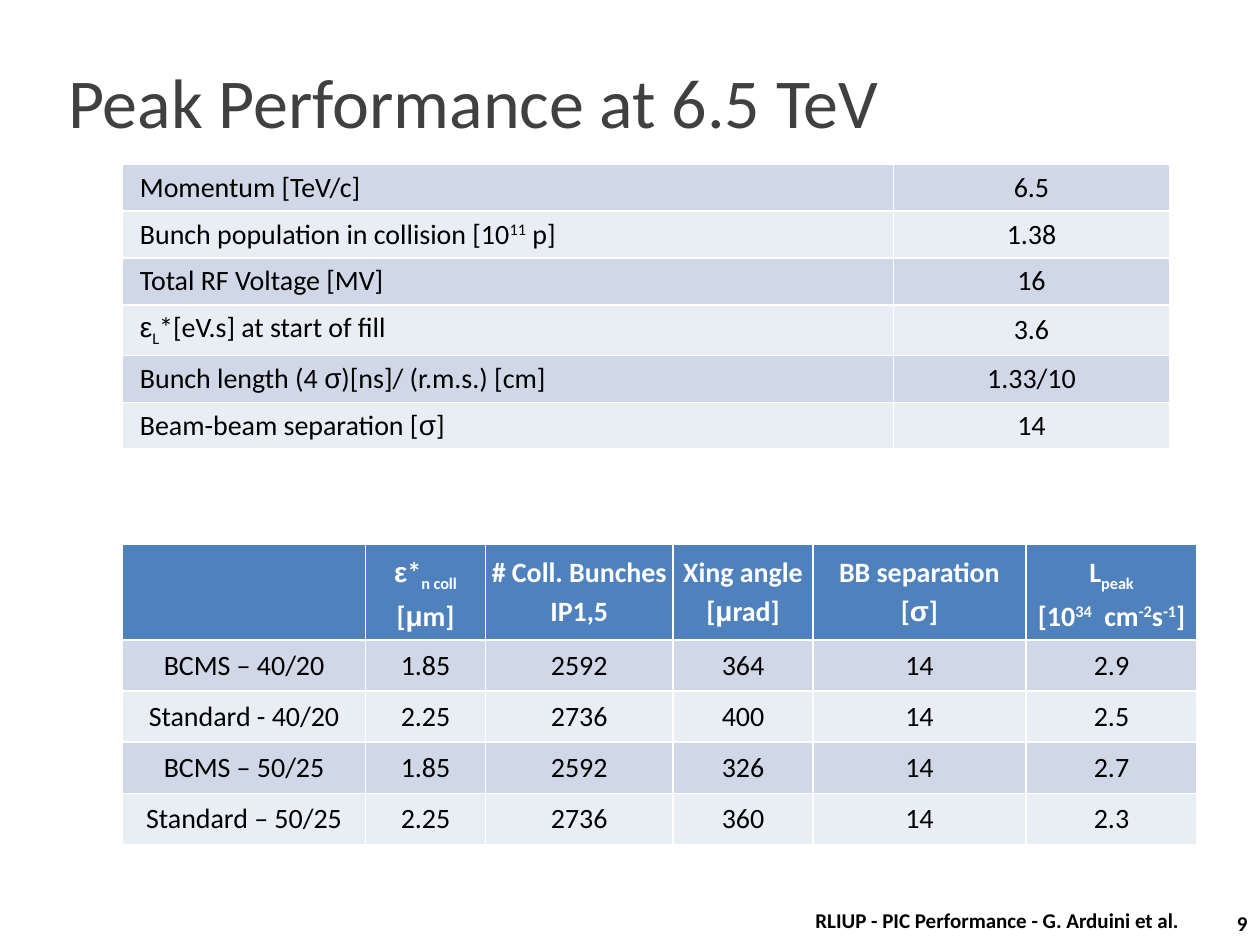
from pptx import Presentation
from pptx.dml.color import RGBColor
from pptx.enum.text import MSO_ANCHOR as Anchor, PP_ALIGN as Align
from pptx.util import Pt

COLORS = {"title": "404040", "text": "000000", "header": "4F81BD",
          "header_text": "FFFFFF", "odd": "D0D8E8", "even": "E9EDF4"}
BASELINES = {"^": "30000", "_": "-25000"}


def write(paragraph, text, size, color, align, bold=False):
    """Runs are split by |; a leading ^ or _ raises or lowers a run."""
    paragraph.alignment = align
    paragraph.font.name = "Calibri"
    paragraph.font.size = Pt(size)
    paragraph.font.bold = bold
    paragraph.font.color.rgb = RGBColor.from_string(COLORS[color])
    for part in text.split("|"):
        run = paragraph.add_run()
        run.text = part.lstrip("^_")
        if part[:1] in BASELINES:
            run._r.get_or_add_rPr().set("baseline", BASELINES[part[0]])
        if part in ("ε", "μ", "σ"):
            run.font.name = "Arial"


def add_grid(left, top, widths, heights, side_margin):
    shape = slide.shapes.add_table(len(heights), len(widths), Pt(left), Pt(top),
                                   Pt(sum(widths)), Pt(sum(heights)))
    table = shape.table
    for column, width in zip(table.columns, widths):
        column.width = Pt(width)
    for row, height in zip(table.rows, heights):
        row.height = Pt(height)
    for cell in table.iter_cells():
        cell.margin_left = cell.margin_right = Pt(side_margin)
        cell.vertical_anchor = Anchor.MIDDLE
        cell.fill.solid()
    return table


presentation = Presentation()
presentation.slide_width, presentation.slide_height = Pt(720), Pt(540)
slide = presentation.slides.add_slide(presentation.slide_layouts[5])

# Title
title = slide.shapes.title
title.left, title.top, title.width, title.height = Pt(36), Pt(21.6), Pt(648), Pt(72)
frame = title.text_frame
frame.margin_left = frame.margin_right = Pt(3)
frame.margin_top = frame.margin_bottom = 0
frame.vertical_anchor = Anchor.MIDDLE
write(frame.paragraphs[0], "Peak Performance at 6.5 TeV", 40, "title", Align.LEFT)

# Performance by filling scheme
headers = ["", "ε|*|_n coll\n[|μ|m]", "# Coll. Bunches IP1,5", "Xing angle\n[|μ|rad]",
           "BB separation [|σ|]", "L|_peak\n[10|^34|  cm|^-2|s|^-1|]"]
schemes = [
    ["BCMS – 40/20", "1.85", "2592", "364", "14", "2.9"],
    ["Standard - 40/20", "2.25", "2736", "400", "14", "2.5"],
    ["BCMS – 50/25", "1.85", "2592", "326", "14", "2.7"],
    ["Standard – 50/25", "2.25", "2736", "360", "14", "2.3"],
]
scheme_table = add_grid(70, 311, [139, 68.4, 107.3, 79.9, 121.7, 97.9],
                        [54] + [29.2] * 4, 7.2)
for cell, header in zip(scheme_table.rows[0].cells, headers):
    cell.fill.fore_color.rgb = RGBColor.from_string(COLORS["header"])
    cell.vertical_anchor = Anchor.TOP
    cell.margin_left = cell.margin_right = Pt(3)
    for index, line in enumerate(header.split("\n")):
        paragraph = cell.text_frame.paragraphs[0] if index == 0 else cell.text_frame.add_paragraph()
        paragraph.line_spacing = 1.15
        if line:
            write(paragraph, line, 16, "header_text", Align.CENTER, bold=True)
for index, values in enumerate(schemes):
    for cell, value in zip(scheme_table.rows[index + 1].cells, values):
        cell.fill.fore_color.rgb = RGBColor.from_string(COLORS["even" if index % 2 else "odd"])
        write(cell.text_frame.paragraphs[0], value, 16, "text", Align.CENTER)

# Beam parameters
parameters = [
    ("Momentum [TeV/c]", "6.5"),
    ("Bunch population in collision [10|^11| p]", "1.38"),
    ("Total RF Voltage [MV]", "16"),
    ("ε|_L|*[eV.s] at start of fill", "3.6"),
    ("Bunch length (4 |σ|)[ns]/ (r.m.s.) [cm]", "1.33/10"),
    ("Beam-beam separation [|σ|]", "14"),
]
parameter_table = add_grid(70, 93.8, [440.6, 157.7], [26.6] * len(parameters), 10)
parameter_table.first_row = False
for index, values in enumerate(parameters):
    for cell, value, align in zip(parameter_table.rows[index].cells, values,
                                  (Align.LEFT, Align.CENTER)):
        cell.fill.fore_color.rgb = RGBColor.from_string(COLORS["even" if index % 2 else "odd"])
        write(cell.text_frame.paragraphs[0], value, 16, "text", align)

# Footer and slide number
for text, left, top, width, height, align in [
    ("RLIUP - PIC Performance - G. Arduini et al.", 455.8, 511.2, 228.2, 28.8, Align.CENTER),
    ("9", 684, 514.8, 36, 25.2, Align.RIGHT),
]:
    box = slide.shapes.add_textbox(Pt(left), Pt(top), Pt(width), Pt(height))
    frame = box.text_frame
    frame.word_wrap = True
    frame.vertical_anchor = Anchor.MIDDLE
    frame.margin_top = frame.margin_bottom = 0
    write(frame.paragraphs[0], text, 12, "text", align, bold=True)

presentation.save("out.pptx")
